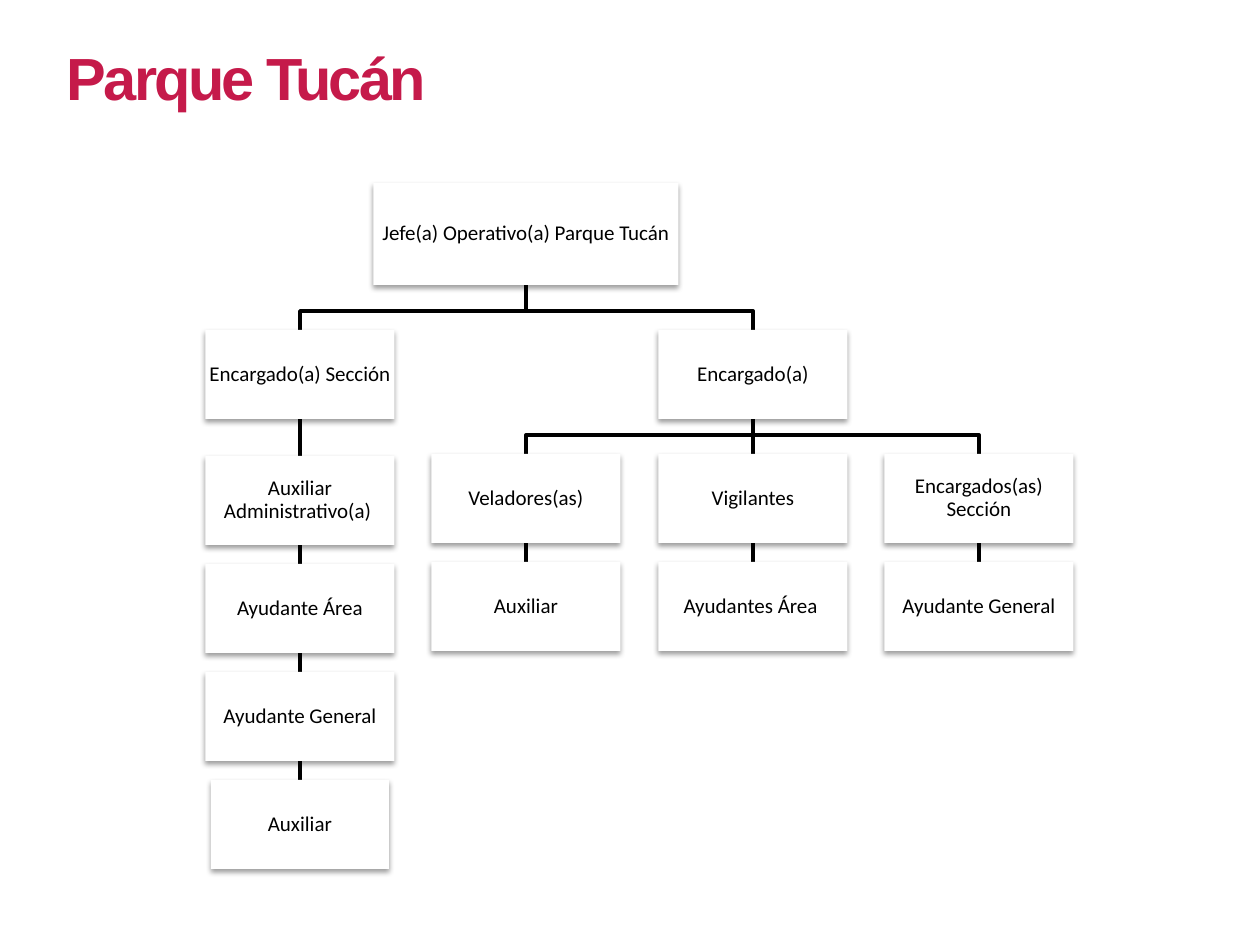
import pptx
import pptx.util
import pptx.dml.color
import pptx.enum.shapes
import pptx.enum.text
import pptx.oxml
import pptx.oxml.ns

PX = 914400 // 126
HEX = {"title": "C51A4A", "ink": "000000", "box": "FFFFFF"}
WIDE, HIGH = 189, 89
BEND = 19  # height of the crossbar above the lower boxes
A_NS = pptx.oxml.ns.nsdecls("a")
ALIGN = pptx.enum.text.PP_ALIGN
ANCHOR = pptx.enum.text.MSO_ANCHOR
SHADOW = (
    f'<a:effectLst {A_NS}><a:outerShdw blurRad="40000" dist="20000" '
    f'dir="5400000" rotWithShape="0"><a:srgbClr val="{HEX["ink"]}">'
    '<a:alpha val="38000"/></a:srgbClr></a:outerShdw></a:effectLst>'
)


def color(name):
    return pptx.dml.color.RGBColor.from_string(HEX[name])


def col(num):
    """Middle of a column of boxes."""
    return 300 + 453 * num // 2


def node(text, mid, top, boss=None, wide=WIDE, high=HIGH):
    return {"text": text, "mid": mid, "top": top, "boss": boss,
            "wide": wide, "high": high}


def chain(texts, mid, top, step, boss):
    """Stack nodes in one column, each under the one before."""
    nodes = []
    for num, text in enumerate(texts):
        boss = node(text, mid, top + num * step, boss)
        nodes.append(boss)
    return nodes


def write(frame, text, font="Calibri", size=12, ink="ink", bold=False,
          align=ALIGN.CENTER, anchor=ANCHOR.MIDDLE, inset=None, lead=None,
          track=None):
    frame.word_wrap = True
    frame.vertical_anchor = anchor
    if inset is not None:
        frame.margin_left = frame.margin_right = inset * PX
        frame.margin_top = frame.margin_bottom = inset * PX
    para = frame.paragraphs[0]
    para.alignment = align
    para.line_spacing = lead
    run = para.add_run()
    run.text = text
    run.font.name = font
    run.font.size = pptx.util.Pt(size)
    run.font.bold = bold
    run.font.color.rgb = color(ink)
    if track is not None:
        run.font._element.set("spc", str(track))


def add_title(slide, text):
    title = slide.shapes.title
    title.left, title.top = 54 * PX, 35 * PX
    title.width, title.height = 446 * PX, 87 * PX
    write(title.text_frame, text, font="Arial", size=34, ink="title",
          bold=True, align=ALIGN.LEFT, anchor=ANCHOR.TOP, track=-150)


def add_link(slide, low):
    """Join a node to its boss, with a crossbar when the columns differ."""
    boss = low["boss"]
    x1, y1 = boss["mid"], boss["top"] + boss["high"]
    x2, y2 = low["mid"], low["top"]
    if x1 == x2:
        link = slide.shapes.add_connector(
            pptx.enum.shapes.MSO_CONNECTOR.STRAIGHT,
            x1 * PX, y1 * PX, x2 * PX, y2 * PX)
    else:
        bar = y2 - BEND
        build = slide.shapes.build_freeform(x1, y1, scale=PX)
        build.add_line_segments([(x1, bar), (x2, bar), (x2, y2)], close=False)
        link = build.convert_to_shape()
        link.fill.background()
    link.line.color.rgb = color("ink")
    link.line.width = pptx.util.Pt(2)
    link._element.spPr.append(pptx.oxml.parse_xml(f"<a:effectLst {A_NS}/>"))


def add_box(slide, item):
    left = item["mid"] - item["wide"] / 2
    box = slide.shapes.add_shape(
        pptx.enum.shapes.MSO_SHAPE.RECTANGLE, round(left * PX),
        item["top"] * PX, item["wide"] * PX, item["high"] * PX)
    box.fill.solid()
    box.fill.fore_color.rgb = color("box")
    box.line.fill.background()
    box._element.spPr.append(pptx.oxml.parse_xml(SHADOW))
    write(box.text_frame, item["text"], inset=1, lead=0.9)


def plan():
    """List the nodes of the chart, each boss before its staff."""
    chief = node("Jefe(a) Operativo(a) Parque Tucán", col(1), 183,
                 wide=305, high=102)
    left = node("Encargado(a) Sección", col(0), 330, chief)
    right = node("Encargado(a)", col(2), 330, chief)
    staff = chain(["Auxiliar Administrativo(a) ", "Ayudante Área",
                   "Ayudante General", "Auxiliar"], col(0), 456, 108, left)
    staff[-1]["wide"] = 178
    teams = [
        ["Veladores(as)", "Auxiliar"],
        ["Vigilantes", "Ayudantes Área "],
        ["Encargados(as) Sección", "Ayudante General"],
    ]
    nodes = [chief, left, *staff, right]
    for num, team in enumerate(teams, 1):
        nodes += chain(team, col(num), 454, 108, right)
    return nodes


def main():
    deck = pptx.Presentation()
    deck.slide_width, deck.slide_height = 1260 * PX, 945 * PX
    slide = deck.slides.add_slide(deck.slide_layouts[5])
    add_title(slide, "Parque Tucán")
    nodes = plan()
    for item in nodes:
        if item["boss"]:
            add_link(slide, item)
    for item in nodes:
        add_box(slide, item)
    deck.save("out.pptx")


if __name__ == "__main__":
    main()
